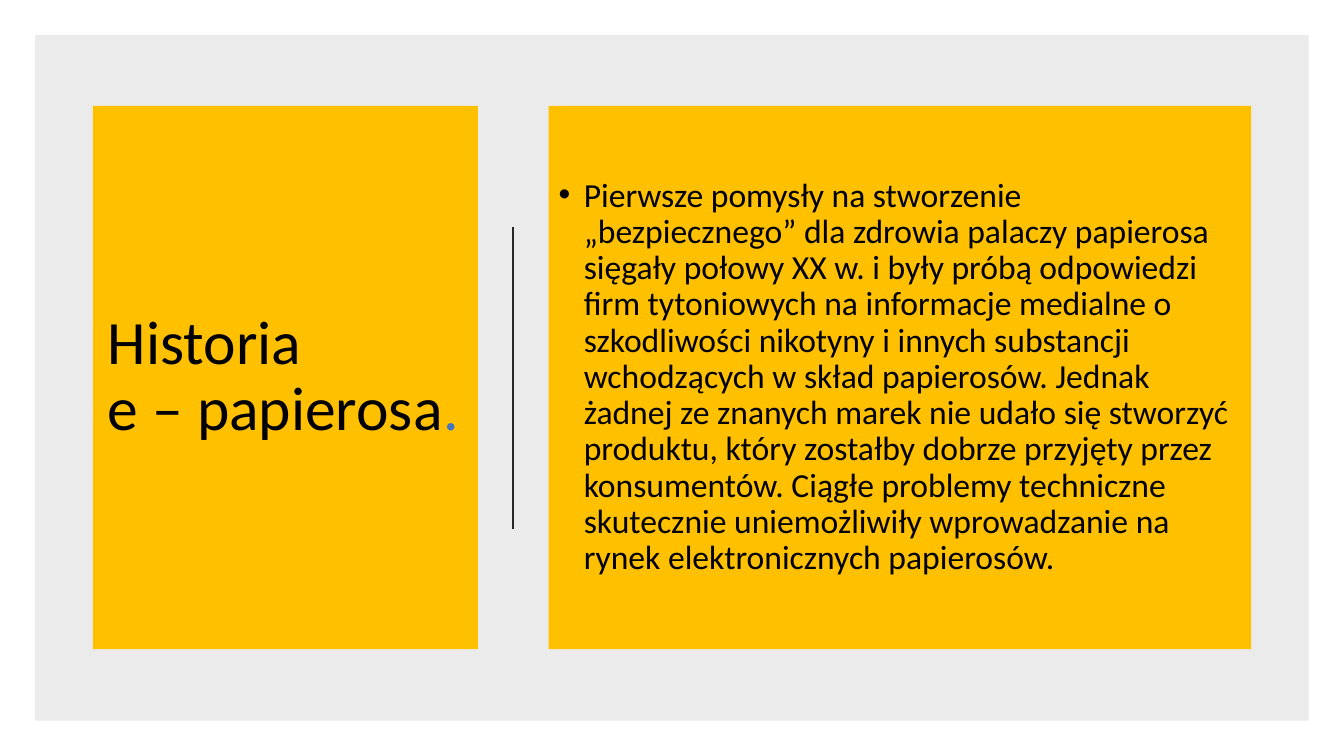
import pptx
import pptx.dml.color
import pptx.enum.shapes
import pptx.enum.text
import pptx.oxml.ns
import pptx.util
from lxml import etree
from pptx.util import Inches

PANEL_TOP, PANEL_HEIGHT = 1.05, 5.39


def paint(color_owner, color):
    """Give a fill or a line a solid colour."""
    fill = getattr(color_owner, "fill", color_owner)
    fill.solid()
    fill.fore_color.rgb = pptx.dml.color.RGBColor.from_string(color)


def write_run(paragraph, text, size, color="000000"):
    run = paragraph.add_run()
    run.text = text
    run.font.name = "Calibri"
    run.font.size = pptx.util.Pt(size)
    paint(run.font, color)


presentation = pptx.Presentation()
presentation.slide_width = Inches(13.33)
presentation.slide_height = Inches(7.5)
slide = presentation.slides.add_slide(presentation.slide_layouts[1])
heading, history = slide.placeholders

# Translucent frame behind everything
frame = slide.shapes.add_shape(
    pptx.enum.shapes.MSO_SHAPE.RECTANGLE,
    Inches(0.35), Inches(0.35), Inches(12.63), Inches(6.8))
frame.shadow.inherit = False
frame.line.fill.background()
paint(frame, "000000")
frame_color = frame.fill._xPr.find(".//" + pptx.oxml.ns.qn("a:srgbClr"))
etree.SubElement(frame_color, pptx.oxml.ns.qn("a:alpha"), val="8000")
slide.shapes._spTree.insert(2, frame._element)

# Yellow panels
for panel, left, width in ((heading, 0.92, 3.82), (history, 5.44, 6.97)):
    panel.left, panel.width = Inches(left), Inches(width)
    panel.top, panel.height = Inches(PANEL_TOP), Inches(PANEL_HEIGHT)
    paint(panel, "FFC000")
    panel.text_frame.word_wrap = True
    panel.text_frame.auto_size = pptx.enum.text.MSO_AUTO_SIZE.NONE
    panel.text_frame.vertical_anchor = pptx.enum.text.MSO_ANCHOR.MIDDLE
    paragraph = panel.text_frame.paragraphs[0]
    paragraph.alignment = pptx.enum.text.PP_ALIGN.LEFT
    paragraph.line_spacing = 0.9

# Title
heading.text_frame.margin_left = Inches(0.15)
title_line = heading.text_frame.paragraphs[0]
write_run(title_line, "Historia", 44)
title_line.add_line_break()
write_run(title_line, "e – papierosa", 44)
write_run(title_line, ".", 44, "4472C4")

# Body
story = history.text_frame.paragraphs[0]
story.space_before = pptx.util.Pt(10)
story_properties = story._p.get_or_add_pPr()
story_properties.set("marL", str(Inches(0.25)))
story_properties.set("indent", str(Inches(-0.25)))
write_run(
    story,
    "Pierwsze pomysły na stworzenie „bezpiecznego” dla zdrowia palaczy "
    "papierosa sięgały połowy XX w. i były próbą odpowiedzi firm tytoniowych "
    "na informacje medialne o szkodliwości nikotyny i innych substancji "
    "wchodzących w skład papierosów. Jednak żadnej ze znanych marek nie udało "
    "się stworzyć produktu, który zostałby dobrze przyjęty przez konsumentów. "
    "Ciągłe problemy techniczne skutecznie uniemożliwiły wprowadzanie na rynek "
    "elektronicznych papierosów.",
    24)

# Divider between the panels
divider = slide.shapes.add_connector(
    pptx.enum.shapes.MSO_CONNECTOR.STRAIGHT,
    Inches(5.09), Inches(2.25), Inches(5.09), Inches(5.25))
paint(divider.line, "262626")
divider.line.width = pptx.util.Pt(1.5)
etree.SubElement(divider._element.spPr, pptx.oxml.ns.qn("a:effectLst"))

presentation.save("out.pptx")
